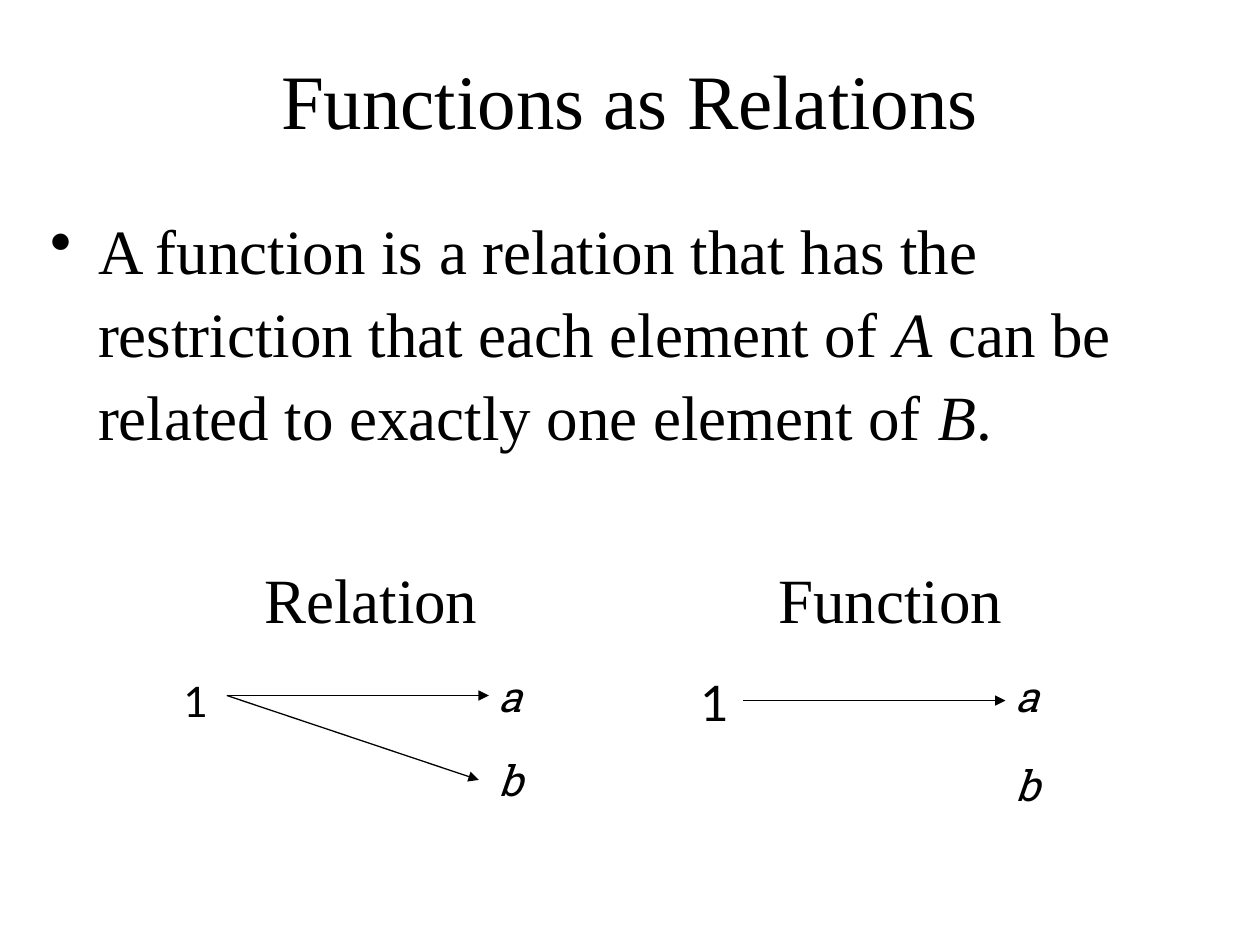
"""Build a slide that contrasts a relation with a function."""
from lxml import etree
from pptx import Presentation
from pptx.dml.color import RGBColor
from pptx.enum.shapes import MSO_CONNECTOR
from pptx.enum.text import MSO_ANCHOR, MSO_AUTO_SIZE, PP_ALIGN
from pptx.oxml.ns import qn
from pptx.util import Inches, Pt

STRAIGHT = MSO_CONNECTOR.STRAIGHT
MIDDLE = MSO_ANCHOR.MIDDLE
GROW = MSO_AUTO_SIZE.SHAPE_TO_FIT_TEXT
CENTER = PP_ALIGN.CENTER

COLORS = {"ink": "000000", "paper": "FFFFFF"}
SERIF, DIGIT, LETTER = "Times New Roman", "Lato", "Roboto Slab"

TITLE = [("Functions as Relations", False)]
DEFINITION = [
    ("A function is a relation that has the restriction that each element of ", False),
    ("A", True),
    (" can be related to exactly one element of ", False),
    ("B", True),
    (".", False),
]

COLUMNS, ROWS = 100, 75
DIAGRAM_PITCH = 41
DIAGRAMS = [
    {
        "heading": ("Relation", (20, 44, 19, 7)),
        "input": ("1", (13.6, 53.1, 3.8, 5), 24),
        "outputs": [("a", 52.7), ("b", 59.4)],
        "arrow_start": 55.2,
        "arrow_ends": [(38.8, 55.2), (38, 61.9)],
    },
    {
        "heading": ("Function", (19.8, 44, 19.8, 7)),
        "input": ("1", (13.6, 52.9, 4.1, 5.7), 28),
        "outputs": [("a", 52.7), ("b", 59.8)],
        "arrow_start": 55.6,
        "arrow_ends": [(38.8, 55.6)],
    },
]
OUTPUT_LEFT, OUTPUT_WIDTH, OUTPUT_HEIGHT = 38.6, 4.1, 5
ARROW_LEFT = 18

deck = Presentation()
deck.slide_width, deck.slide_height = Inches(10), Inches(7.5)
slide = deck.slides.add_slide(deck.slide_layouts[6])
slide.background.fill.solid()
slide.background.fill.fore_color.rgb = RGBColor.from_string(COLORS["paper"])


def across(columns):
    return round(deck.slide_width * columns / COLUMNS)


def down(rows):
    return round(deck.slide_height * rows / ROWS)


def add_text(shapes, runs, cell, size, font=SERIF, wrap=False):
    left, top, width, height = cell
    box = shapes.add_textbox(across(left), down(top), across(width), down(height))
    frame = box.text_frame
    frame.word_wrap = wrap
    if not wrap:
        frame.auto_size = GROW
    for words, italic in runs:
        run = frame.paragraphs[0].add_run()
        run.text = words
        run.font.name = font
        run.font.size = Pt(size)
        run.font.italic = italic
        run.font.color.rgb = RGBColor.from_string(COLORS["ink"])
    return frame


def add_arrow(shapes, start, end):
    arrow = shapes.add_connector(
        STRAIGHT, across(start[0]), down(start[1]), across(end[0]), down(end[1])
    )
    arrow.line.width = Pt(0.75)
    arrow.line.color.rgb = RGBColor.from_string(COLORS["ink"])
    etree.SubElement(arrow.line._get_or_add_ln(), qn("a:tailEnd"), type="triangle")
    etree.SubElement(arrow._element.spPr, qn("a:effectLst"))


def add_diagram(diagram, shift):
    shapes = slide.shapes.add_group_shape().shapes
    digit, (left, top, width, height), size = diagram["input"]
    add_text(shapes, [(digit, False)], (left + shift, top, width, height), size, DIGIT)
    for letter, top in diagram["outputs"]:
        cell = (OUTPUT_LEFT + shift, top, OUTPUT_WIDTH, OUTPUT_HEIGHT)
        add_text(shapes, [(letter, True)], cell, 24, LETTER)
    for end_left, end_top in diagram["arrow_ends"]:
        start = (ARROW_LEFT + shift, diagram["arrow_start"])
        add_arrow(shapes, start, (end_left + shift, end_top))
    heading, (left, top, width, height) = diagram["heading"]
    add_text(shapes, [(heading, False)], (left + shift, top, width, height), 36)


title = add_text(slide.shapes, TITLE, (5, 2.6, 90, 10.5), 44, wrap=True)
title.vertical_anchor = MIDDLE
title.paragraphs[0].alignment = CENTER

definition = add_text(slide.shapes, DEFINITION, (3, 15.7, 94.5, 51.3), 36, wrap=True)
bullet_line = definition.paragraphs[0]
bullet_line.line_spacing = 1.1
bullet_line.space_before = Pt(7.2)
bullet_format = bullet_line._p.get_or_add_pPr()
bullet_format.set("marL", str(Inches(0.38)))
bullet_format.set("indent", str(-Inches(0.38)))
etree.SubElement(bullet_format, qn("a:buChar"), char="•")

for position, diagram in enumerate(DIAGRAMS):
    add_diagram(diagram, position * DIAGRAM_PITCH)

deck.save("out.pptx")
